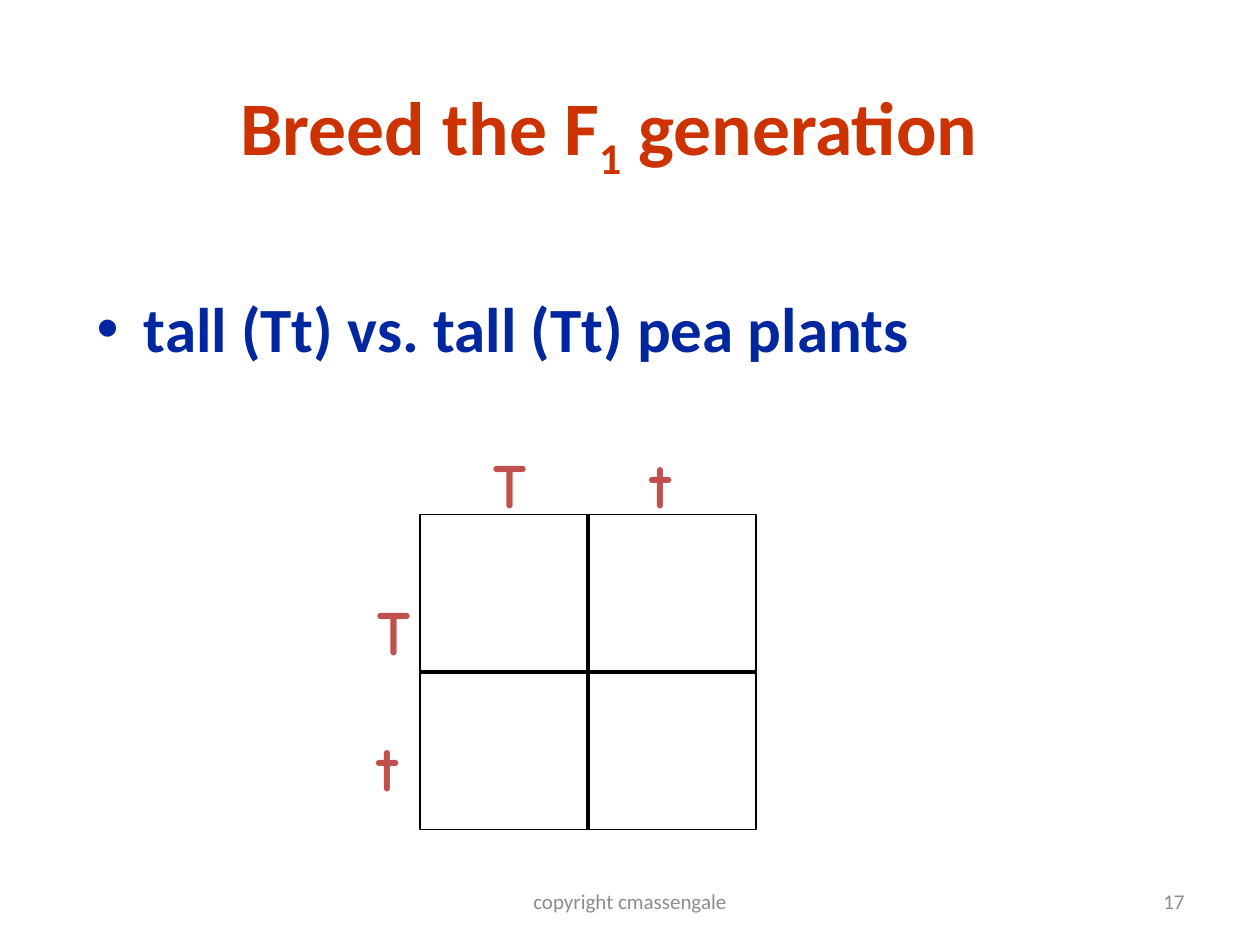
from pptx import Presentation
from pptx.dml.color import RGBColor
from pptx.enum.shapes import MSO_CONNECTOR, MSO_SHAPE
from pptx.enum.text import MSO_ANCHOR, MSO_AUTO_SIZE, PP_ALIGN
from pptx.oxml.ns import qn
from pptx.util import Pt
from lxml.etree import SubElement

PX = 7620
RED = RGBColor(0xCC, 0x33, 0x00)
BLUE = RGBColor(0x00, 0x27, 0x9F)
ROSE = RGBColor(0xC0, 0x50, 0x4D)
GRAY = RGBColor(0x8C, 0x8C, 0x8C)
BLACK = RGBColor(0x00, 0x00, 0x00)


class Deck:
    fonts = {
        "title": {"name": "Calibri", "size": Pt(43.2), "bold": True, "color": RED},
        "body": {"name": "Calibri", "size": Pt(36), "bold": True, "color": BLUE},
        "gene": {"name": "Comic Neue", "size": Pt(36), "bold": True, "color": ROSE},
        "foot": {"name": "Calibri", "size": Pt(12), "color": GRAY},
    }

    def __init__(self, show):
        self.slide = show.slides.add_slide(show.slide_layouts[1])

    def place(self, item, *box):
        for key, val in zip(("left", "top", "width", "height"), box):
            setattr(item, key, val * PX)

    def add_text(self, para, text, style, base=0):
        run = para.add_run()
        run.text = text
        for key, val in self.fonts[style].items():
            if key == "color":
                run.font.color.rgb = val
            else:
                setattr(run.font, key, val)
        if base:
            run._r.get_or_add_rPr().set("baseline", str(base * 1000))

    def title(self, parts, *box):
        item = self.slide.shapes.title
        self.place(item, *box)
        frame = item.text_frame
        frame.auto_size = MSO_AUTO_SIZE.NONE
        frame.vertical_anchor = MSO_ANCHOR.MIDDLE
        para = frame.paragraphs[0]
        para.alignment = PP_ALIGN.CENTER
        for text, base in parts:
            self.add_text(para, text, "title", base)

    def body(self, lines, *box):
        item = self.slide.placeholders[1]
        self.place(item, *box)
        frame = item.text_frame
        frame.auto_size = MSO_AUTO_SIZE.NONE
        for num, line in enumerate(lines):
            para = frame.add_paragraph() if num else frame.paragraphs[0]
            self.add_text(para, line, "body")

    def label(self, text, style, *box, **form):
        item = self.slide.shapes.add_textbox(*(n * PX for n in box))
        frame = item.text_frame
        for key, val in form.items():
            target = frame.paragraphs[0] if key == "alignment" else frame
            setattr(target, key, val)
        self.add_text(frame.paragraphs[0], text, style)

    def line(self, *ends):
        item = self.slide.shapes.add_connector(
            MSO_CONNECTOR.STRAIGHT, *(n * PX for n in ends))
        item.line.color.rgb = BLACK
        item.line.width = Pt(2)
        SubElement(item._element.spPr, qn("a:effectLst"))

    def frame(self, *box):
        item = self.slide.shapes.add_shape(
            MSO_SHAPE.RECTANGLE, *(n * PX for n in box))
        item.shadow.inherit = False
        item.fill.background()
        item.line.color.rgb = BLACK
        item.line.width = Pt(1)


def main():
    show = Presentation()
    show.slide_width, show.slide_height = 1200 * PX, 900 * PX
    deck = Deck(show)
    deck.title([("Breed the F", 0), ("1", -25), (" generation", 0)],
               0, 90, 1160, 70)
    deck.body(["tall (Tt) vs. tall (Tt) pea plants"], 80, 270, 1090, 570)

    genes = [("T", 348, 558, 66), ("t", 348, 688, 52),
             ("T", 458, 418, 66), ("t", 608, 418, 52)]
    for text, left, top, wide in genes:
        deck.label(text, "gene", left, top, wide, 84, word_wrap=False,
                   auto_size=MSO_AUTO_SIZE.SHAPE_TO_FIT_TEXT)

    left, top, wide, high = 400, 490, 320, 300
    midx, midy = left + wide // 2, top + high // 2
    deck.line(midx, top + high, midx, top)
    deck.line(left + wide, midy, left, midy)
    deck.frame(left, top, wide, high)

    feet = [("copyright cmassengale", 410, 380, PP_ALIGN.CENTER),
            ("17", 860, 280, PP_ALIGN.RIGHT)]
    for text, left, wide, align in feet:
        deck.label(text, "foot", left, 834, wide, 48, word_wrap=True,
                   vertical_anchor=MSO_ANCHOR.MIDDLE, alignment=align)
    show.save("out.pptx")


if __name__ == "__main__":
    main()
